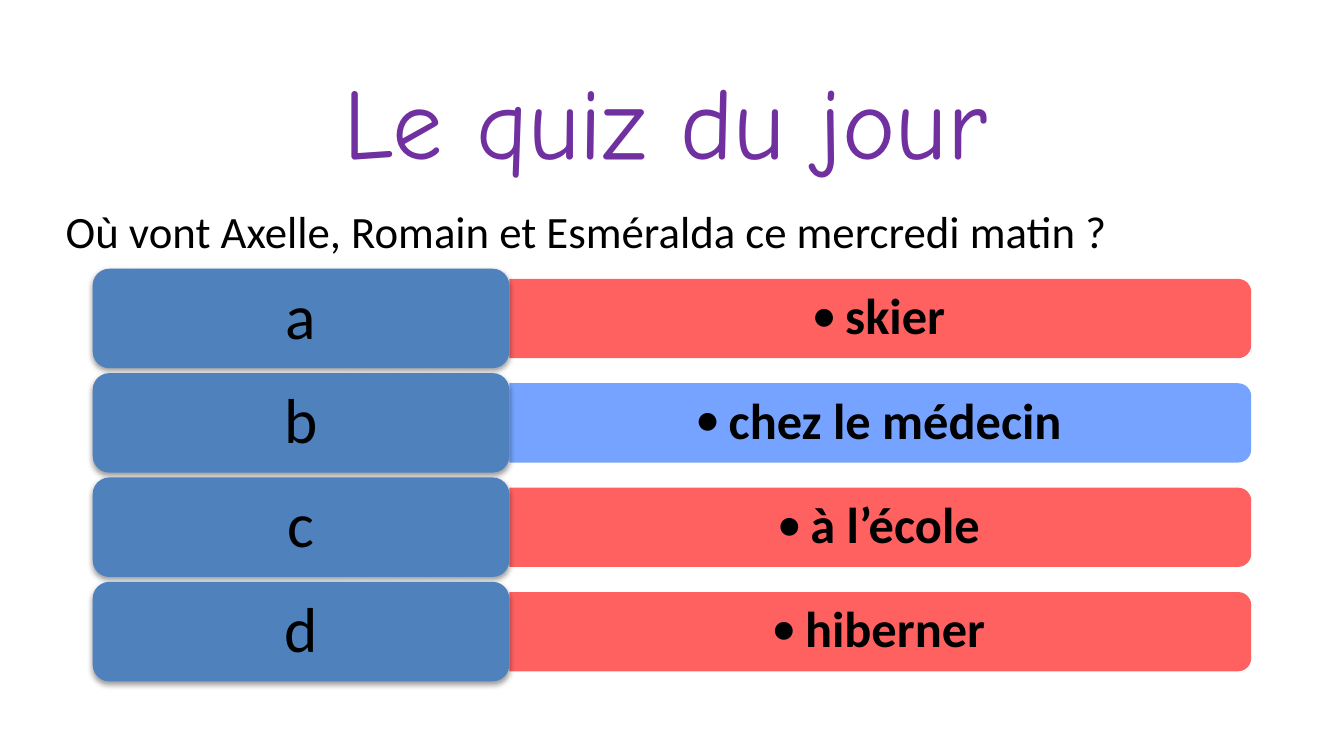
from dataclasses import dataclass

from lxml import etree
from pptx import Presentation
from pptx.dml.color import RGBColor
from pptx.enum.shapes import MSO_SHAPE
from pptx.enum.text import MSO_ANCHOR, MSO_AUTO_SIZE, PP_ALIGN
from pptx.oxml.ns import qn
from pptx.util import Inches, Pt

ROUNDED = MSO_SHAPE.ROUNDED_RECTANGLE
ROUNDED_END = MSO_SHAPE.ROUND_2_SAME_RECTANGLE
CENTER, MIDDLE = PP_ALIGN.CENTER, MSO_ANCHOR.MIDDLE
NO_FIT, GROW = MSO_AUTO_SIZE.NONE, MSO_AUTO_SIZE.SHAPE_TO_FIT_TEXT


@dataclass(frozen=True)
class Theme:
    title_font: str = "Comic Neue"
    text_font: str = "Calibri"
    title: str = "7030A0"
    ink: str = "000000"
    letter_fill: str = "4F81BD"
    red: str = "FF5050"
    blue: str = "6699FF"
    title_size: int = 54
    letter_size: int = 34
    answer_size: int = 27
    question_size: int = 24


theme = Theme()


def add_run(paragraph, words, size, color=theme.ink, font=theme.text_font, bold=False):
    run = paragraph.add_run()
    run.text = words
    run.font.name = font
    run.font.size = Pt(size)
    run.font.bold = bold
    run.font.color.rgb = RGBColor.from_string(color)


def add_block(preset, left, top, width, height, color):
    block = slide.shapes.add_shape(
        preset, Inches(left), Inches(top), Inches(width), Inches(height))
    block.shadow.inherit = False
    block.fill.solid()
    block.fill.fore_color.rgb = RGBColor.from_string(color)
    block.line.fill.background()
    return block


prs = Presentation()
prs.slide_width = Inches(10)
prs.slide_height = prs.slide_width * 9 // 16
slide = prs.slides.add_slide(prs.slide_layouts[5])

title = slide.shapes.title
title.left, title.top = Inches(0.69), Inches(0.2)
title.width, title.height = Inches(8.62), Inches(1.09)
heading = title.text_frame
heading.auto_size = NO_FIT
heading.vertical_anchor = MIDDLE
heading.margin_top, heading.margin_bottom = Inches(0.29), 0
heading.margin_right = Inches(0.2)
heading.paragraphs[0].alignment = CENTER
add_run(heading.paragraphs[0], "Le quiz du jour", theme.title_size, theme.title, theme.title_font)

choices = [
    ("a", "skier", theme.red),
    ("b", "chez le médecin", theme.blue),
    ("c", "à l’école", theme.red),
    ("d", "hiberner", theme.red),
]
first_top, last_top = 2, 4.33
pitch = (last_top - first_top) / (len(choices) - 1)
letter_left, letter_width, letter_height = 0.69, 3.1, 0.74
bar_left, bar_width, bar_height = letter_left + letter_width, 5.52, 0.59
answer_width, answer_height = 5.49, 0.53

for row, (letter, answer, color) in enumerate(choices):
    top = first_top + row * pitch
    middle = top + letter_height / 2

    bar = add_block(
        ROUNDED_END, bar_left + (bar_width - bar_height) / 2, middle - bar_width / 2,
        bar_height, bar_width, color)
    bar.rotation = 90
    bar_color = bar._element.spPr.find(qn("a:solidFill"))[0]
    etree.SubElement(bar_color, qn("a:alpha"), val="90000")

    answer_box = slide.shapes.add_textbox(
        Inches(bar_left), Inches(middle - answer_height / 2),
        Inches(answer_width), Inches(answer_height)).text_frame
    answer_box.word_wrap = True
    answer_box.vertical_anchor = MIDDLE
    answer_box.margin_left = answer_box.margin_right = Inches(0.11)
    answer_box.margin_top = answer_box.margin_bottom = Inches(0.06)
    answer_line = answer_box.paragraphs[0]
    answer_line.alignment = CENTER
    answer_line.level = 1
    answer_line.line_spacing = 0.9
    indents = answer_line._p.get_or_add_pPr()
    indents.set("marL", str(Inches(0.25)))
    indents.set("indent", str(Inches(-0.25)))
    etree.SubElement(indents, qn("a:buFont"), typeface=theme.text_font)
    etree.SubElement(indents, qn("a:buChar"), char="•")
    add_run(answer_line, answer, theme.answer_size, bold=True)

    key = add_block(ROUNDED, letter_left, top, letter_width, letter_height, theme.letter_fill)
    effects = key._element.spPr.find(qn("a:effectLst"))
    shadow = etree.SubElement(
        effects, qn("a:outerShdw"), blurRad=str(Pt(3.1)), dist=str(Pt(1.6)),
        dir="5400000", rotWithShape="0")
    shadow_color = etree.SubElement(shadow, qn("a:srgbClr"), val=theme.ink)
    etree.SubElement(shadow_color, qn("a:alpha"), val="38000")
    key.text_frame.vertical_anchor = MIDDLE
    letter_line = key.text_frame.paragraphs[0]
    letter_line.alignment = CENTER
    letter_line.line_spacing = 0.9
    add_run(letter_line, letter, theme.letter_size)

question = slide.shapes.add_textbox(
    Inches(0.39), Inches(1.47), Inches(8.02), Inches(0.5)).text_frame
question.word_wrap = False
question.auto_size = GROW
add_run(
    question.paragraphs[0], "Où vont Axelle, Romain et Esméralda ce mercredi matin ?",
    theme.question_size)

prs.save("out.pptx")
